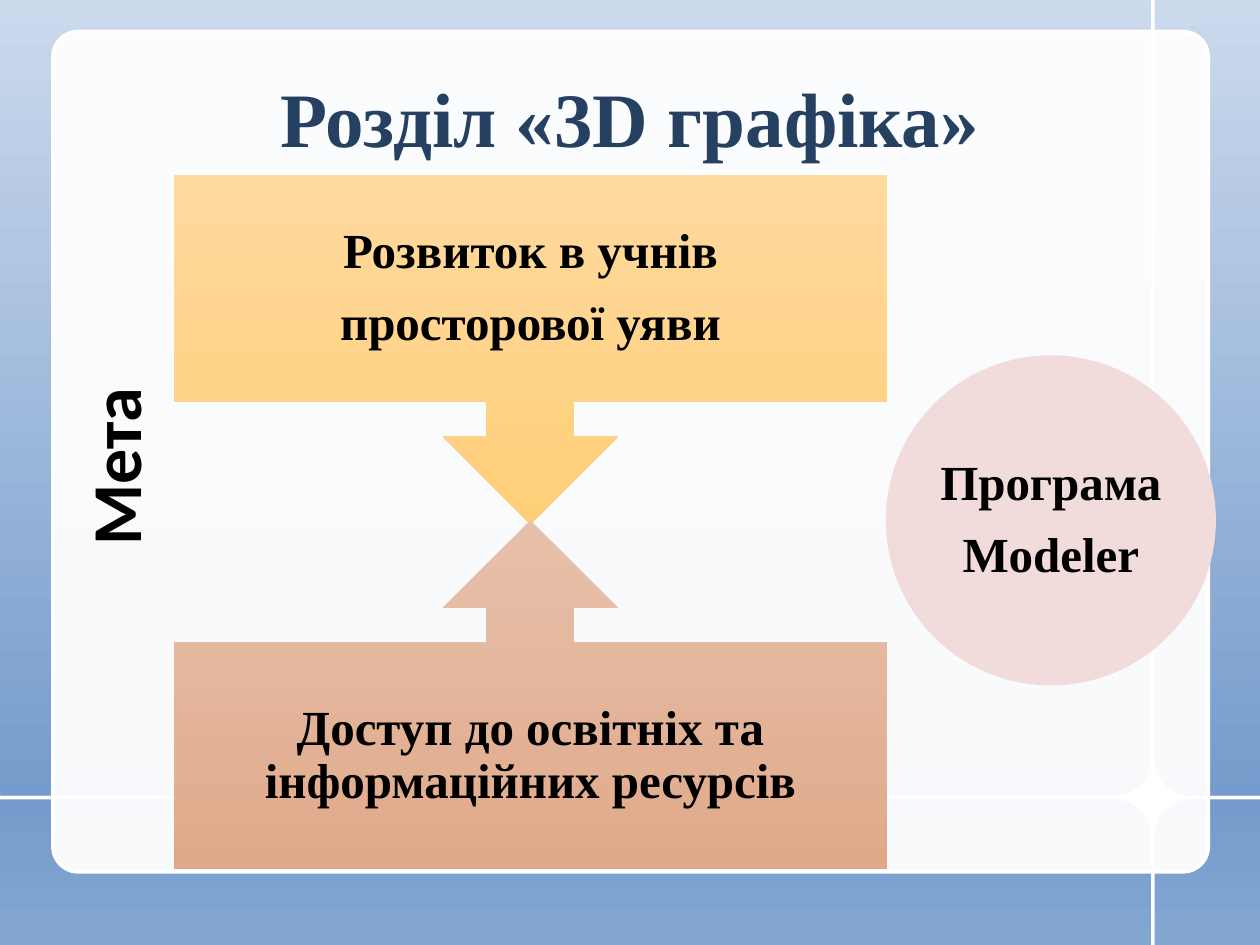
from pptx import Presentation
from pptx.dml.color import RGBColor
from pptx.enum.shapes import MSO_SHAPE
from pptx.enum.text import MSO_ANCHOR, MSO_AUTO_SIZE, PP_ALIGN
from pptx.util import Inches, Pt
from lxml import etree

ROUND, OVAL = MSO_SHAPE.ROUNDED_RECTANGLE, MSO_SHAPE.OVAL
DOWN, UP = MSO_SHAPE.DOWN_ARROW_CALLOUT, MSO_SHAPE.UP_ARROW_CALLOUT
MIDDLE, CENTER = MSO_ANCHOR.MIDDLE, PP_ALIGN.CENTER
FIXED = MSO_AUTO_SIZE.NONE

# Content
TITLE = "Розділ «3D графіка»"
GOAL = "Мета"
AIMS = [
    (DOWN, "gold", ["Розвиток в учнів", "просторової уяви"]),
    (UP, "clay", ["Доступ до освітніх та інформаційних ресурсів"]),
]
TOOL = ["Програма", "Modeler"]

# Theme
THEME = {
    "serif": "Times New Roman", "sans": "Calibri",
    "title": 44, "goal": 40, "body": 28,
    "navy": "254061", "black": "000000", "white": "FFFFFF", "rose": "F2DCDB",
    "sky": ("DCE6F2", "759CCC"),
    "gold": ("FFDA9F", "FFCF78"),
    "clay": ("E7C0AB", "E0AA8A"),
}

# Layout in inches
WIDE, HIGH = 10, 7.5
CROSS_X, CROSS_Y = 9.15, 6.33
PANEL_W, PANEL_H = 9.43, 7.58
CARD = (0.42, 0.25, 9.17, 6.67)
AIM_X, AIM_Y, AIM_W, AIM_H = 1.38, 1.39, 5.66, 2.77
AIM_STEP = 2.74
DISC = (7.03, 2.82, 2.62, 2.62)
TITLE_BOX = (0.5, 0.3, 9, 1.25)
GOAL_BOX = (-1.11, 3.32, 4.02, 0.77)


def rgb(name):
    return RGBColor.from_string(THEME.get(name, name))


def place(shape, box):
    shape.left, shape.top, shape.width, shape.height = map(Inches, box)


def draw(slide, kind, box, fill, line=None):
    """Add a shape; a tuple as fill is a top-to-bottom gradient."""
    shape = slide.shapes.add_shape(kind, *map(Inches, box))
    shape.shadow.inherit = False
    if isinstance(fill, tuple):
        shape.fill.gradient()
        shape.fill.gradient_angle = 270
        for stop, color in zip(shape.fill.gradient_stops, fill):
            stop.color.rgb = rgb(color)
    else:
        shape.fill.solid()
        shape.fill.fore_color.rgb = rgb(fill)
    if line:
        shape.line.color.rgb = rgb(line)
        shape.line.width = Pt(2)
    else:
        shape.line.fill.background()
    return shape


def write(shape, lines, size, font="serif", color="black"):
    frame = shape.text_frame
    frame.text = "\n".join(lines)
    frame.word_wrap = True
    frame.auto_size = FIXED
    for para in frame.paragraphs:
        para.alignment = CENTER
        for run in para.runs:
            run.font.name = THEME[font]
            run.font.size = Pt(THEME[size])
            run.font.bold = True
            run.font.color.rgb = rgb(color)
    return frame


def label(shape, lines, inset):
    frame = write(shape, lines, "body")
    frame.vertical_anchor = MIDDLE
    frame.margin_left = frame.margin_right = Inches(inset)
    frame.margin_top = frame.margin_bottom = Inches(inset)
    for para in frame.paragraphs:
        para.line_spacing = 0.9
        para.space_after = Pt(11)


def backdrop(slide):
    """Four panels that meet at the cross, under a pale card."""
    for y, fill in ((CROSS_Y - PANEL_H, THEME["sky"]),
                    (CROSS_Y, THEME["sky"][::-1])):
        for x in (CROSS_X - PANEL_W, CROSS_X):
            panel = draw(slide, ROUND, (x, y, PANEL_W, PANEL_H), fill, "white")
            panel.adjustments[0] = 0.04
    card = draw(slide, ROUND, CARD, "white", "white")
    card.adjustments[0] = 0.03
    color = card.fill._xPr.find(".//{*}srgbClr")
    tag = etree.QName(color).namespace
    etree.SubElement(color, f"{{{tag}}}alpha", val="95000")


def heads(slide):
    """Title and sideways goal, raised above the backdrop."""
    title, goal = slide.shapes.title, slide.placeholders[1]
    for holder, box in ((title, TITLE_BOX), (goal, GOAL_BOX)):
        place(holder, box)
        slide.shapes._spTree.append(holder._element)
    write(title, [TITLE], "title", color="navy").vertical_anchor = MIDDLE
    frame = write(goal, [GOAL], "goal", "sans")
    goal.rotation = 270
    props = frame.paragraphs[0]._p.get_or_add_pPr()
    props.set("marL", "0")
    props.set("indent", "0")
    etree.SubElement(props, f"{{{etree.QName(props).namespace}}}buNone")


def main():
    deck = Presentation()
    deck.slide_width, deck.slide_height = Inches(WIDE), Inches(HIGH)
    slide = deck.slides.add_slide(deck.slide_layouts[1])
    backdrop(slide)
    heads(slide)

    # Two aims whose arrows meet
    for row, (kind, color, lines) in enumerate(AIMS):
        box = (AIM_X, AIM_Y + row * AIM_STEP, AIM_W, AIM_H)
        label(draw(slide, kind, box, THEME[color]), lines, 0.22)

    # Tool
    label(draw(slide, OVAL, DISC, "rose"), TOOL, 0.01)
    deck.save("out.pptx")


if __name__ == "__main__":
    main()
